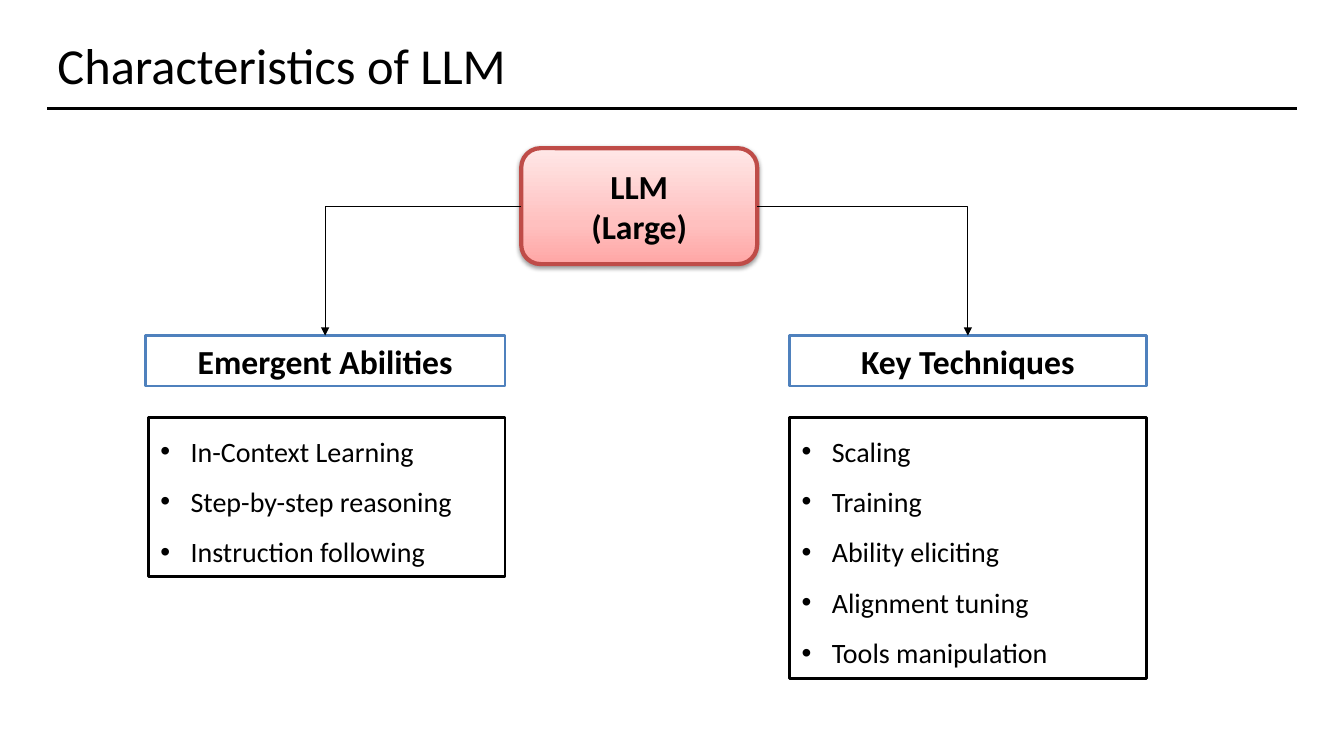
"""Builds the slide on the characteristics of large language models."""
from copy import deepcopy

from lxml.etree import SubElement
from pptx import Presentation
from pptx.dml.color import RGBColor
from pptx.enum.shapes import MSO_CONNECTOR, MSO_SHAPE
from pptx.enum.text import MSO_ANCHOR, MSO_AUTO_SIZE, PP_ALIGN
from pptx.oxml.ns import qn
from pptx.util import Inches, Pt

BLACK = RGBColor(0x00, 0x00, 0x00)
WHITE = RGBColor(0xFF, 0xFF, 0xFF)
BLUE = RGBColor(0x4F, 0x81, 0xBD)
RED = RGBColor(0xBF, 0x4C, 0x48)
PINKS = [(0, RGBColor(0xFF, 0xA6, 0xA5)),
         (0.35, RGBColor(0xFF, 0xC0, 0xBF)),
         (1, RGBColor(0xFF, 0xE7, 0xE7))]

HEADING_FONT = {"name": "Calibri", "size": Pt(24), "bold": True}
ITEM_FONT = {"name": "Calibri", "size": Pt(20), "bold": False}
HEADING_FRAME = {"word_wrap": True, "vertical_anchor": MSO_ANCHOR.TOP,
                 "auto_size": MSO_AUTO_SIZE.SHAPE_TO_FIT_TEXT}
ITEM_FRAME = HEADING_FRAME | {"margin_left": Inches(0.12), "margin_top": 0,
                              "margin_right": Inches(0.1), "margin_bottom": Inches(0.12)}
ROOT_FRAME = {"word_wrap": True, "vertical_anchor": MSO_ANCHOR.MIDDLE}

BRANCHES = [
    {"heading": "Emergent Abilities", "heading_left": 1.44, "heading_width": 3.57,
     "list_left": 1.47, "list_height": 1.58, "root_side": 1,
     "items": ["In-Context Learning", "Step-by-step reasoning", "Instruction following"]},
    {"heading": "Key Techniques", "heading_left": 7.83, "heading_width": 3.54,
     "list_left": 7.83, "list_height": 2.59, "root_side": 3,
     "items": ["Scaling", "Training", "Ability eliciting", "Alignment tuning",
               "Tools manipulation"]},
]


def add_box(preset, place, border, border_width, lines, frame_format, font_format, bullets=False):
    box = slide.shapes.add_shape(preset, *[Inches(length) for length in place])
    box.shadow.inherit = False
    box.fill.solid()
    box.fill.fore_color.rgb = WHITE
    box.line.color.rgb = border
    box.line.width = Pt(border_width)
    frame = box.text_frame
    for attribute, value in frame_format.items():
        setattr(frame, attribute, value)
    frame.text = "\n".join(lines)
    for paragraph in frame.paragraphs:
        paragraph.alignment = PP_ALIGN.LEFT if bullets else PP_ALIGN.CENTER
        if bullets:
            paragraph.line_spacing = 1.5
            properties = paragraph._p.get_or_add_pPr()
            properties.set("marL", str(Inches(0.3)))
            properties.set("indent", str(-Inches(0.3)))
            SubElement(properties, qn("a:buFont"), typeface="Arial")
            SubElement(properties, qn("a:buChar"), char="•")
        font = paragraph.runs[0].font
        for attribute, value in font_format.items():
            setattr(font, attribute, value)
        font.color.rgb = BLACK
    return box


def style_connector(connector, width):
    connector.line.color.rgb = BLACK
    connector.line.width = Pt(width)
    SubElement(connector._element.spPr, qn("a:effectLst"))


deck = Presentation()
deck.slide_width, deck.slide_height = Inches(13.33), Inches(7.5)
slide = deck.slides.add_slide(deck.slide_layouts[5])

title = slide.shapes.title
title.left, title.top, title.width, title.height = [
    Inches(length) for length in (0.47, 0.14, 12.39, 0.85)]
title.text_frame.text = "Characteristics of LLM"
title.text_frame.vertical_anchor = MSO_ANCHOR.BOTTOM
title_line = title.text_frame.paragraphs[0]
title_line.alignment = PP_ALIGN.LEFT
title_font = title_line.runs[0].font
title_font.name, title_font.size = "Calibri", Pt(36)
title_font.color.rgb = BLACK

title_rule = slide.shapes.add_connector(
    MSO_CONNECTOR.STRAIGHT, Inches(0.47), Inches(1.08), Inches(12.86), Inches(1.08))
style_connector(title_rule, 2)

root = add_box(MSO_SHAPE.ROUNDED_RECTANGLE, (5.17, 1.47, 2.34, 1.15), RED, 3,
               ["LLM", "(Large)"], ROOT_FRAME, HEADING_FONT)
root.fill.gradient()
root.fill.gradient_angle = 90
root_properties = root._element.spPr
stop_list = root_properties.find(".//" + qn("a:gsLst"))
stop_list.append(deepcopy(stop_list[-1]))
for stop, (position, pink) in zip(root.fill.gradient_stops, PINKS):
    stop.position = position
    stop.color.rgb = pink
root_shadow = SubElement(root_properties.find(qn("a:effectLst")), qn("a:outerShdw"),
                         blurRad=str(Pt(3.1)), dist=str(Pt(1.6)), dir="5400000",
                         rotWithShape="0")
shadow_color = SubElement(root_shadow, qn("a:srgbClr"), val=str(BLACK))
SubElement(shadow_color, qn("a:alpha"), val="38000")

for branch in BRANCHES:
    heading = add_box(MSO_SHAPE.RECTANGLE,
                      (branch["heading_left"], 3.33, branch["heading_width"], 0.5),
                      BLUE, 2, [branch["heading"]], HEADING_FRAME, HEADING_FONT)
    add_box(MSO_SHAPE.RECTANGLE, (branch["list_left"], 4.14, 3.54, branch["list_height"]),
            BLACK, 2, branch["items"], ITEM_FRAME, ITEM_FONT, bullets=True)
    arrow = slide.shapes.add_connector(MSO_CONNECTOR.ELBOW, 0, 0, 0, 0)
    arrow.begin_connect(root, branch["root_side"])
    arrow.end_connect(heading, 0)
    arrow._element.spPr.find(qn("a:prstGeom")).set("prst", "bentConnector2")
    style_connector(arrow, 0.75)
    SubElement(arrow.line._get_or_add_ln(), qn("a:tailEnd"), type="triangle")

deck.save("out.pptx")
